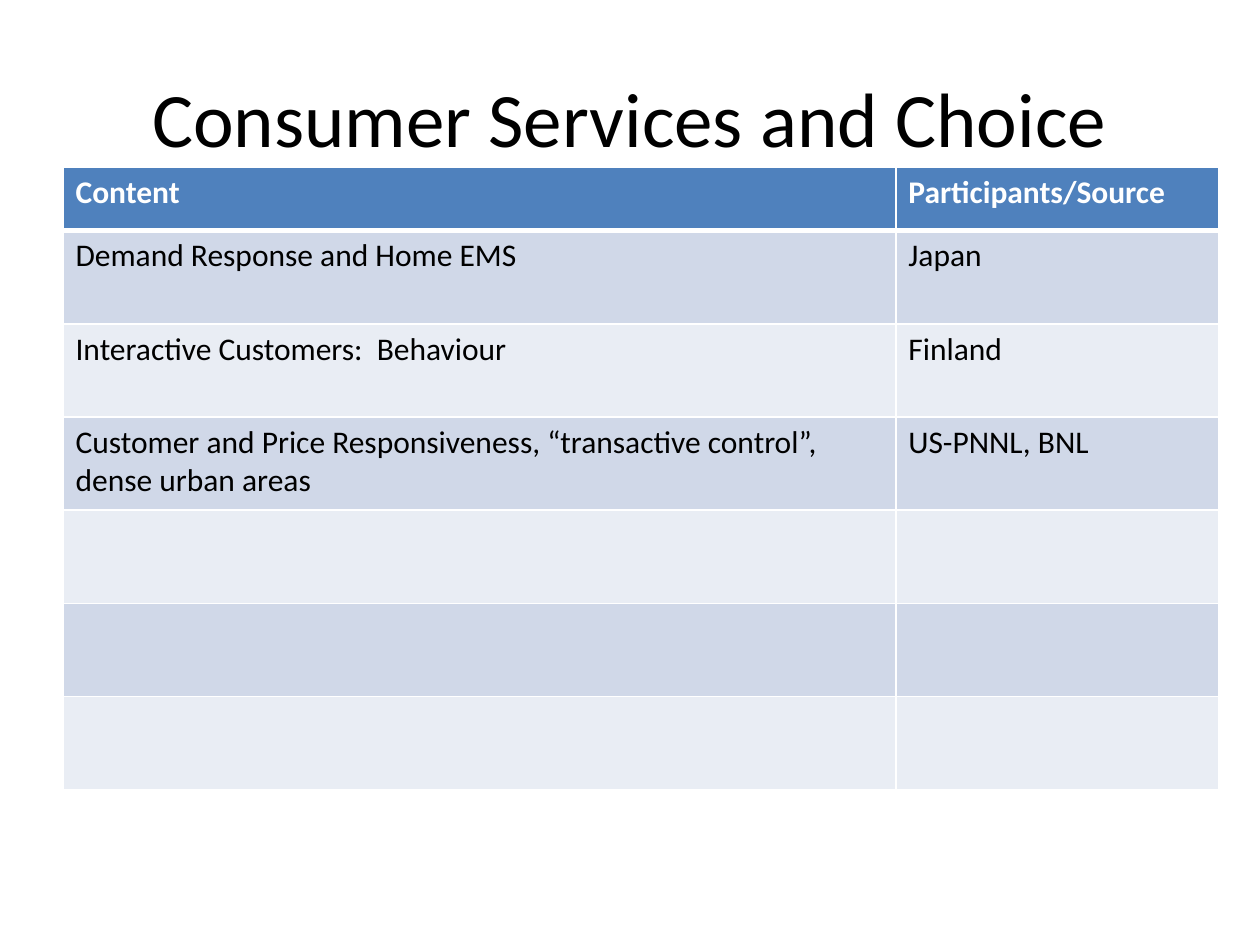
from dataclasses import dataclass

from lxml import etree
from pptx import Presentation
from pptx import util as u
from pptx.dml.color import RGBColor
from pptx.enum import text
from pptx.oxml.ns import qn

# Content
TITLE = "Consumer Services and Choice"
HEADER = ("Content", "Participants/Source")
TOPICS = [
    ("Demand Response and Home EMS", "Japan"),
    ("Interactive Customers:  Behaviour", "Finland"),
    ("Customer and Price Responsiveness, “transactive control”, dense urban areas",
     "US-PNNL, BNL"),
]
EMPTY_ROWS = 3

# Layout, in inches
TITLE_AREA = (0.5, 0.3, 9, 1.25)
TABLE_LEFT, TABLE_TOP = 0.5, 1.33
COLUMN_WIDTHS = (6.61, 2.56)
HEADER_HEIGHT, ROW_HEIGHT = 0.5, 0.74


@dataclass(frozen=True)
class Theme:
    font: str = "Calibri"
    title_size: int = 44
    table_size: int = 18
    ink: str = "000000"
    header_ink: str = "FFFFFF"
    header_fill: str = "4F81BD"
    bands: tuple = ("D0D8E8", "E9EDF4")
    rule: str = "FFFFFF"
    thin: int = 1
    thick: int = 3


THEME = Theme()


def style_font(para, size, color, bold=False):
    para.font.name = THEME.font
    para.font.size = u.Pt(size)
    para.font.bold = bold
    para.font.color.rgb = RGBColor.from_string(color)


def add_borders(cell, widths):
    """Draw solid rules; widths maps a side (L, R, T, B) to points."""
    properties = cell._tc.get_or_add_tcPr()
    for index, (side, width) in enumerate(widths.items()):
        line = etree.Element(qn(f"a:ln{side}"), w=str(u.Pt(width)))
        fill = etree.SubElement(line, qn("a:solidFill"))
        etree.SubElement(fill, qn("a:srgbClr"), val=THEME.rule)
        properties.insert(index, line)


def add_title(page):
    box = page.shapes.add_textbox(*map(u.Inches, TITLE_AREA))
    frame = box.text_frame
    frame.word_wrap = True
    frame.vertical_anchor = text.MSO_ANCHOR.MIDDLE
    para = frame.paragraphs[0]
    para.text = TITLE
    para.alignment = text.PP_ALIGN.CENTER
    style_font(para, THEME.title_size, THEME.ink)


def add_topic_table(page):
    rows = [HEADER, *TOPICS, *[("", "")] * EMPTY_ROWS]
    heights = [HEADER_HEIGHT] + [ROW_HEIGHT] * (len(rows) - 1)
    table = page.shapes.add_table(
        len(rows), len(HEADER), u.Inches(TABLE_LEFT), u.Inches(TABLE_TOP),
        u.Inches(sum(COLUMN_WIDTHS)), u.Inches(sum(heights))).table
    for column, width in zip(table.columns, COLUMN_WIDTHS):
        column.width = u.Inches(width)

    for r, (row, height) in enumerate(zip(rows, heights)):
        table.rows[r].height = u.Inches(height)
        is_header = r == 0
        fill = THEME.header_fill if is_header else THEME.bands[(r - 1) % 2]
        ink = THEME.header_ink if is_header else THEME.ink
        # The rule under the header is heavier than the others
        widths = {"L": THEME.thin, "R": THEME.thin,
                  "T": THEME.thick if r == 1 else THEME.thin,
                  "B": THEME.thick if is_header else THEME.thin}
        for c, words in enumerate(row):
            cell = table.cell(r, c)
            cell.fill.solid()
            cell.fill.fore_color.rgb = RGBColor.from_string(fill)
            add_borders(cell, widths)
            para = cell.text_frame.paragraphs[0]
            if words:
                para.text = words
            style_font(para, THEME.table_size, ink, bold=is_header)


def main():
    deck = Presentation()
    deck.slide_width, deck.slide_height = u.Inches(10), u.Inches(7.5)
    page = deck.slides.add_slide(deck.slide_layouts[6])
    add_title(page)
    add_topic_table(page)
    deck.save("out.pptx")


if __name__ == "__main__":
    main()
